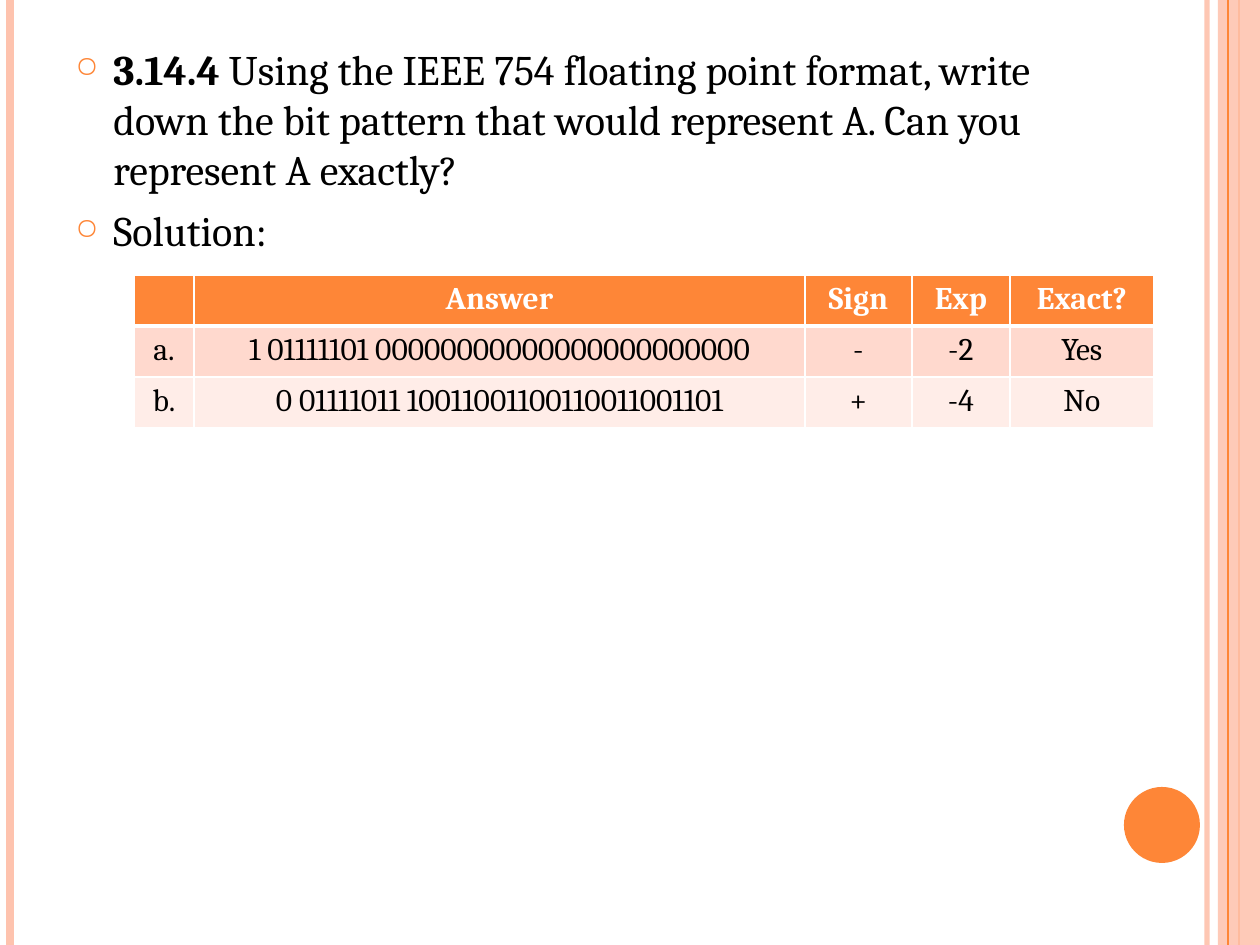
from dataclasses import dataclass

from lxml.etree import SubElement
from pptx import Presentation
from pptx.dml.color import RGBColor
from pptx.enum.shapes import MSO_CONNECTOR, MSO_SHAPE
from pptx.enum.text import PP_ALIGN
from pptx.oxml.ns import qn
from pptx.util import Emu, Pt

EMU_PER_PX = 914400 / 126
WIDTH, HEIGHT = 1260, 945


@dataclass(frozen=True)
class Theme:
    font: str = "Cambria"
    black: str = "000000"
    white: str = "FFFFFF"
    accent: str = "FE8637"
    pale: str = "FEC3AE"
    bands: tuple = ("FFD9CE", "FFEDE8")
    body_size: int = 24
    table_size: int = 18


@dataclass(frozen=True)
class Stripe:
    x: int
    color: str
    weight: float
    opacity: int = 100


@dataclass(frozen=True)
class Block:
    kind: MSO_SHAPE
    box: tuple
    color: str
    opacity: int = 100


THEME = Theme()
DECORATION = [
    Stripe(1207, THEME.pale, 3, 93),
    Stripe(10, THEME.pale, 4.5),
    Stripe(1239, THEME.accent, 1.5),
    Block(MSO_SHAPE.RECTANGLE, (1218, 0, 42, HEIGHT), THEME.pale, 87),
    Stripe(1228, THEME.accent, 0.75),
    Block(MSO_SHAPE.OVAL, (1124, 787, 76, 76), THEME.accent),
]
# Each paragraph is a list of (text, bold) runs
BODY = [
    [("3.14.4", True),
     (" Using the IEEE 754 floating point format, write down the bit pattern "
      "that would represent A. Can you represent A exactly?", False)],
    [("Solution:", False)],
]
COLUMNS = [60, 611, 107, 98, 144]
ROW_HEIGHT = 51
ROWS = [
    ["", "Answer", "Sign", "Exp", "Exact?"],
    ["a.", "1 01111101 00000000000000000000000", "-", "-2", "Yes"],
    ["b.", "0 01111011 10011001100110011001101", "+", "-4", "No"],
]


def px(n: int) -> Emu:
    return Emu(round(n * EMU_PER_PX))


def rgb(color: str) -> RGBColor:
    return RGBColor.from_string(color)


def set_opacity(fill_parent, percent: int) -> None:
    if percent < 100:
        clr = fill_parent.find(qn("a:solidFill")).find(qn("a:srgbClr"))
        SubElement(clr, qn("a:alpha"), val=str(percent * 1000))


def style_font(font, size: int, color: str, bold: bool) -> None:
    values = {"name": THEME.font, "size": Pt(size), "bold": bold}
    for name, value in values.items():
        setattr(font, name, value)
    font.color.rgb = rgb(color)


def draw_stripe(s, stripe: Stripe) -> None:
    line = s.shapes.add_connector(
        MSO_CONNECTOR.STRAIGHT, px(stripe.x), 0, px(stripe.x), px(HEIGHT))
    line.line.color.rgb = rgb(stripe.color)
    line.line.width = Pt(stripe.weight)
    spPr = line._element.spPr
    set_opacity(spPr.find(qn("a:ln")), stripe.opacity)
    SubElement(spPr, qn("a:effectLst"))


def draw_block(s, block: Block) -> None:
    sp = s.shapes.add_shape(block.kind, *map(px, block.box))
    sp.shadow.inherit = False
    sp.fill.solid()
    sp.fill.fore_color.rgb = rgb(block.color)
    sp.line.fill.background()
    set_opacity(sp._element.spPr, block.opacity)


def add_bullet(p) -> None:
    p.space_before = Pt(6)
    pPr = p._p.get_or_add_pPr()
    indent = px(38)
    pPr.set("marL", str(indent))
    pPr.set("indent", str(-indent))
    SubElement(SubElement(pPr, qn("a:buClr")), qn("a:srgbClr"), val=THEME.accent)
    SubElement(pPr, qn("a:buSzPct"), val="70000")
    SubElement(pPr, qn("a:buChar"), char="○")


def draw_body(s) -> None:
    tf = s.shapes.add_textbox(px(63), px(37), px(1029), px(228)).text_frame
    tf.word_wrap = True
    for i, runs in enumerate(BODY):
        p = tf.add_paragraph() if i else tf.paragraphs[0]
        add_bullet(p)
        for text, bold in runs:
            r = p.add_run()
            r.text = text
            style_font(r.font, THEME.body_size, THEME.black, bold)


def set_borders(cell, top: int, bottom: int) -> None:
    tcPr = cell._tc.get_or_add_tcPr()
    for side, weight in {"L": 1, "R": 1, "T": top, "B": bottom}.items():
        ln = SubElement(tcPr, qn(f"a:ln{side}"), w=str(Pt(weight)))
        SubElement(SubElement(ln, qn("a:solidFill")), qn("a:srgbClr"), val=THEME.white)


def draw_table(s) -> None:
    table = s.shapes.add_table(
        len(ROWS), len(COLUMNS), px(134), px(275),
        px(sum(COLUMNS)), px(ROW_HEIGHT * len(ROWS))).table
    for column, width in zip(table.columns, COLUMNS):
        column.width = px(width)
    fills = (THEME.accent, *THEME.bands)
    for i, texts in enumerate(ROWS):
        table.rows[i].height = px(ROW_HEIGHT)
        header = i == 0
        for j, text in enumerate(texts):
            cell = table.cell(i, j)
            set_borders(cell, top=3 if i == 1 else 1, bottom=3 if header else 1)
            cell.fill.solid()
            cell.fill.fore_color.rgb = rgb(fills[i])
            if text:
                p = cell.text_frame.paragraphs[0]
                p.alignment = PP_ALIGN.CENTER
                r = p.add_run()
                r.text = text
                color = THEME.white if header else THEME.black
                style_font(r.font, THEME.table_size, color, header)


def main() -> None:
    prs = Presentation()
    prs.slide_width, prs.slide_height = px(WIDTH), px(HEIGHT)
    s = prs.slides.add_slide(prs.slide_layouts[6])

    # Side stripes and corner disc
    for part in DECORATION:
        draw = draw_stripe if isinstance(part, Stripe) else draw_block
        draw(s, part)

    # Question and answer table
    draw_body(s)
    draw_table(s)
    prs.save("out.pptx")


if __name__ == "__main__":
    main()
